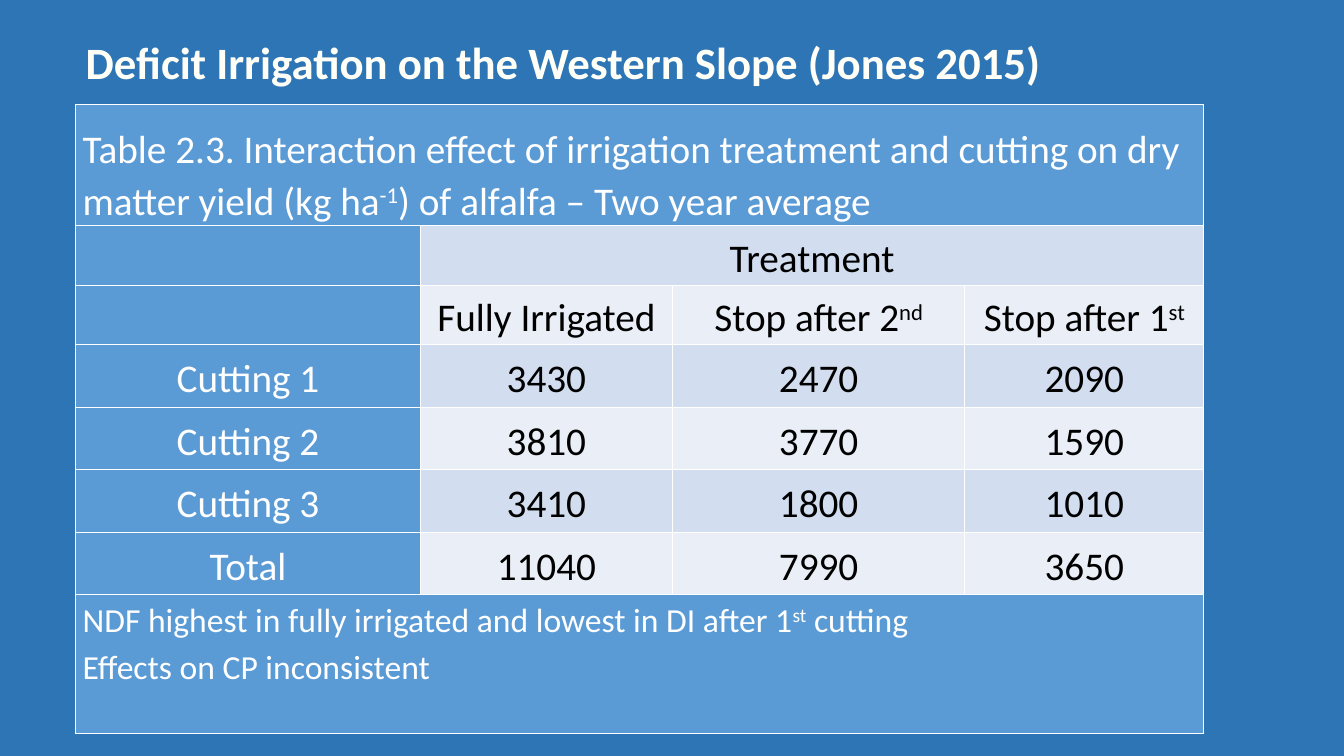
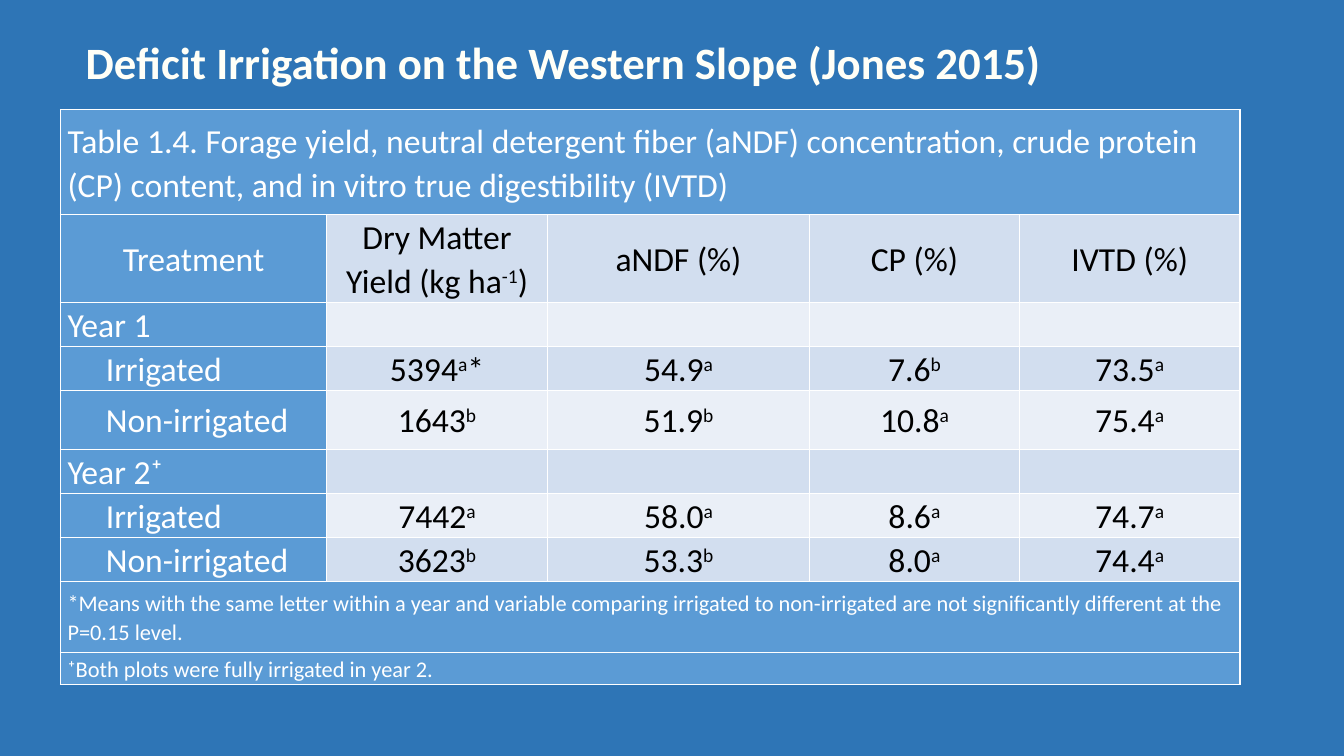
from lxml.etree import SubElement
from pptx import Presentation
from pptx.dml.color import RGBColor
from pptx.enum.text import MSO_ANCHOR, MSO_AUTO_SIZE, PP_ALIGN
from pptx.oxml.ns import qn
from pptx.util import Inches, Pt

TITLE = "Deficit Irrigation on the Western Slope (Jones 2015)"


def rgb(value):
    return RGBColor.from_string(value)


class Deck:
    """Shared style and the current slide."""

    FONT = "Calibri"
    BACKGROUND, TITLE_COLOR = "2E75B6", "FFFFF7"
    HEADER, BANDS = "5B9BD5", ("EAEFF7", "D2DEEF")
    LIGHT, DARK, BORDER = "FFFFFF", "000000", "FFFFFF"

    def __init__(self):
        self.prs = Presentation()
        self.prs.slide_width = Inches(13.33)
        self.prs.slide_height = Inches(7.5)
        fill = self.prs.slide_master.background.fill
        fill.solid()
        fill.fore_color.rgb = rgb(self.BACKGROUND)

    def add_slide(self, title):
        self.s = self.prs.slides.add_slide(self.prs.slide_layouts[5])
        sp = self.s.shapes.title
        sp.left, sp.top = Inches(0.75), Inches(0.29)
        sp.width, sp.height = Inches(10.74), Inches(0.64)
        tf = sp.text_frame
        tf.word_wrap = True
        tf.auto_size = MSO_AUTO_SIZE.NONE
        tf.vertical_anchor = MSO_ANCHOR.TOP
        p = tf.paragraphs[0]
        p.alignment = PP_ALIGN.LEFT
        self.add_runs(p, title, 32, self.TITLE_COLOR, bold=True)

    def add_runs(self, p, text, size, color, bold=False):
        """Text between a pair of ^ marks is superscript."""
        for i, part in enumerate(text.split("^")):
            if not part:
                continue
            r = p.add_run()
            r.text = part
            r.font.name, r.font.size, r.font.bold = self.FONT, Pt(size), bold
            r.font.color.rgb = rgb(color)
            if i % 2:
                r.font._element.set("baseline", "30000")

    def style_cell(self, cell, color):
        cell.margin_left = cell.margin_right = Inches(0.07)
        cell.margin_top = cell.margin_bottom = 0
        cell.fill.solid()
        cell.fill.fore_color.rgb = rgb(color)
        tcPr = cell._tc.get_or_add_tcPr()
        for i, side in enumerate(("a:lnL", "a:lnR", "a:lnT", "a:lnB")):
            ln = SubElement(tcPr, qn(side), w=str(Pt(1)))
            line_fill = SubElement(ln, qn("a:solidFill"))
            SubElement(line_fill, qn("a:srgbClr"), val=self.BORDER)
            tcPr.insert(i, ln)

    def write_cell(self, cell, text, size, color, align, spacing):
        """A leading > indents the paragraph."""
        tf = cell.text_frame
        for i, line in enumerate(text.split("\n")):
            p = tf.add_paragraph() if i else tf.paragraphs[0]
            p.alignment, p.line_spacing = align, spacing
            if line.startswith(">"):
                p._p.get_or_add_pPr().set("marL", str(Inches(0.38)))
            self.add_runs(p, line.lstrip(">"), size, color)

    def add_table(self, left, top, widths, rows, size, note_size, spacing,
                  left_rows=(), anchors=None):
        """The last text of a short row spans the remaining columns."""
        count = len(widths)
        heights = [height for height, _ in rows]
        table = self.s.shapes.add_table(
            len(rows), count, Inches(left), Inches(top),
            Inches(sum(widths)), Inches(sum(heights))).table
        table.first_row = table.horz_banding = False
        for column, width in zip(table.columns, widths):
            column.width = Inches(width)
        for i, (height, texts) in enumerate(rows):
            table.rows[i].height = Inches(height)
            full = len(texts) == 1
            for j in range(count):
                header = full or j == 0
                cell = table.cell(i, j)
                self.style_cell(cell, self.HEADER if header else self.BANDS[i % 2])
                cell.vertical_anchor = (anchors or {}).get(i, MSO_ANCHOR.MIDDLE)
                if j >= len(texts):
                    continue
                to_left = full or (j == 0 and i in left_rows)
                self.write_cell(
                    cell, texts[j],
                    note_size if full and i else size,
                    self.LIGHT if header else self.DARK,
                    PP_ALIGN.LEFT if to_left else PP_ALIGN.CENTER,
                    spacing if i else 1.07)
            if len(texts) < count:
                table.cell(i, len(texts) - 1).merge(table.cell(i, count - 1))


def main():
    deck = Deck()

    # Yield by treatment and cutting
    deck.add_slide(TITLE)
    deck.add_table(0.75, 1.04, [3.42, 2.5, 2.9, 2.37], [
        (1.2, ["Table 2.3. Interaction effect of irrigation treatment and cutting "
               "on dry matter yield (kg ha^-1^) of alfalfa – Two year average"]),
        (0.59, ["", "Treatment"]),
        (0.59, ["", "Fully Irrigated", "Stop after 2^nd^", "Stop after 1^st^"]),
        (0.62, ["Cutting 1", "3430", "2470", "2090"]),
        (0.62, ["Cutting 2", "3810", "3770", "1590"]),
        (0.62, ["Cutting 3", "3410", "1800", "1010"]),
        (0.62, ["Total", "11040", "7990", "3650"]),
        (1.38, ["NDF highest in fully irrigated and lowest in DI after 1^st^ cutting\n"
                "Effects on CP inconsistent"]),
    ], size=28, note_size=24, spacing=1.15,
        anchors={0: MSO_ANCHOR.BOTTOM, 7: MSO_ANCHOR.TOP})

    # Forage yield and quality by year
    deck.add_slide(TITLE)
    deck.add_table(0.6, 1.09, [2.64, 2.19, 2.6, 2.08, 2.19], [
        (1.04, ["Table 1.4. Forage yield, neutral detergent fiber (aNDF) concentration, "
                "crude protein (CP) content, and in vitro true digestibility (IVTD)"]),
        (0.86, ["Treatment", "Dry Matter Yield (kg ha^-1^)", "aNDF (%)", "CP (%)",
                "IVTD (%)"]),
        (0.43, ["Year 1", "", "", "", ""]),
        (0.43, [">Irrigated", "5394^a^*", "54.9^a^", "7.6^b^", "73.5^a^"]),
        (0.59, [">Non-irrigated", "1643^b^", "51.9^b^", "10.8^a^", "75.4^a^"]),
        (0.43, ["Year 2⁺", "", "", "", ""]),
        (0.43, [">Irrigated", "7442^a^", "58.0^a^", "8.6^a^", "74.7^a^"]),
        (0.43, [">Non-irrigated", "3623^b^", "53.3^b^", "8.0^a^", "74.4^a^"]),
        (0.71, ["*Means with the same letter within a year and variable comparing "
                "irrigated to non-irrigated are not significantly different at the "
                "P=0.15 level."]),
        (0.31, ["⁺Both plots were fully irrigated in year 2."]),
    ], size=24, note_size=16, spacing=1.07, left_rows=range(2, 8))

    deck.prs.save("out.pptx")


if __name__ == "__main__":
    main()
